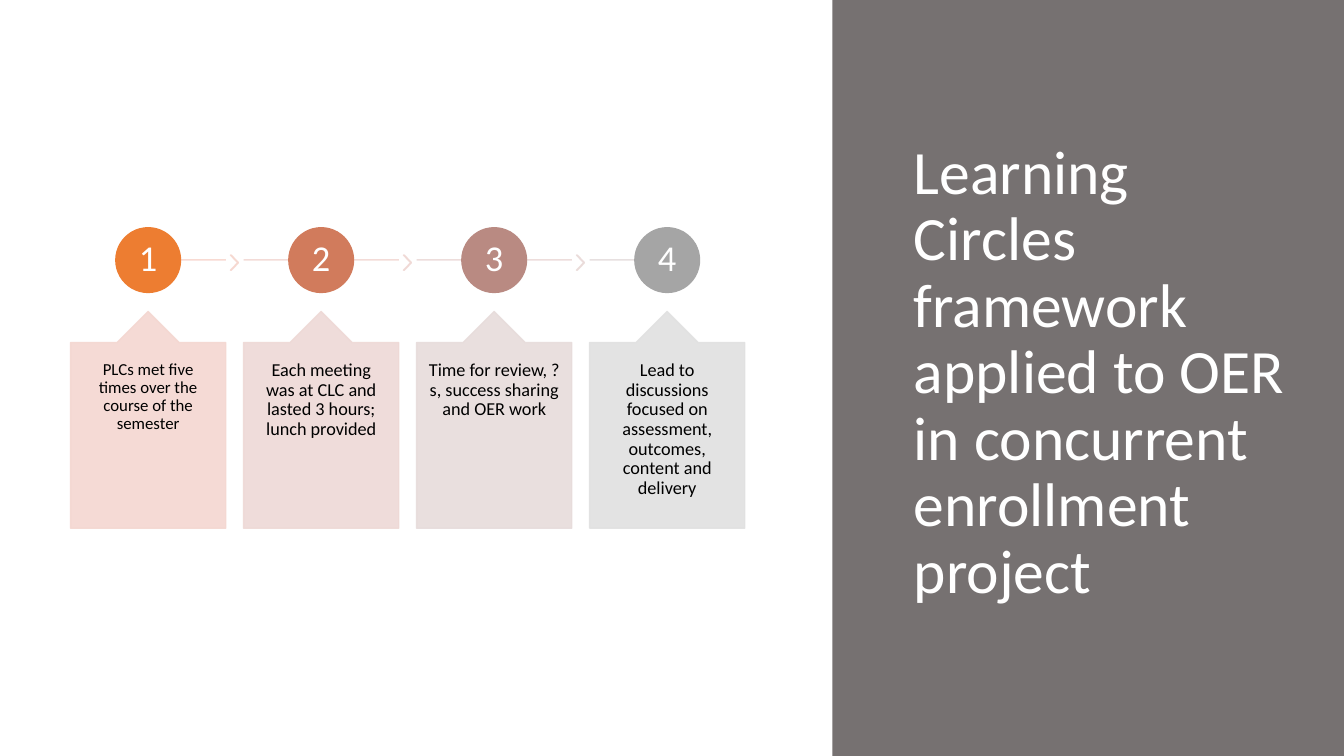
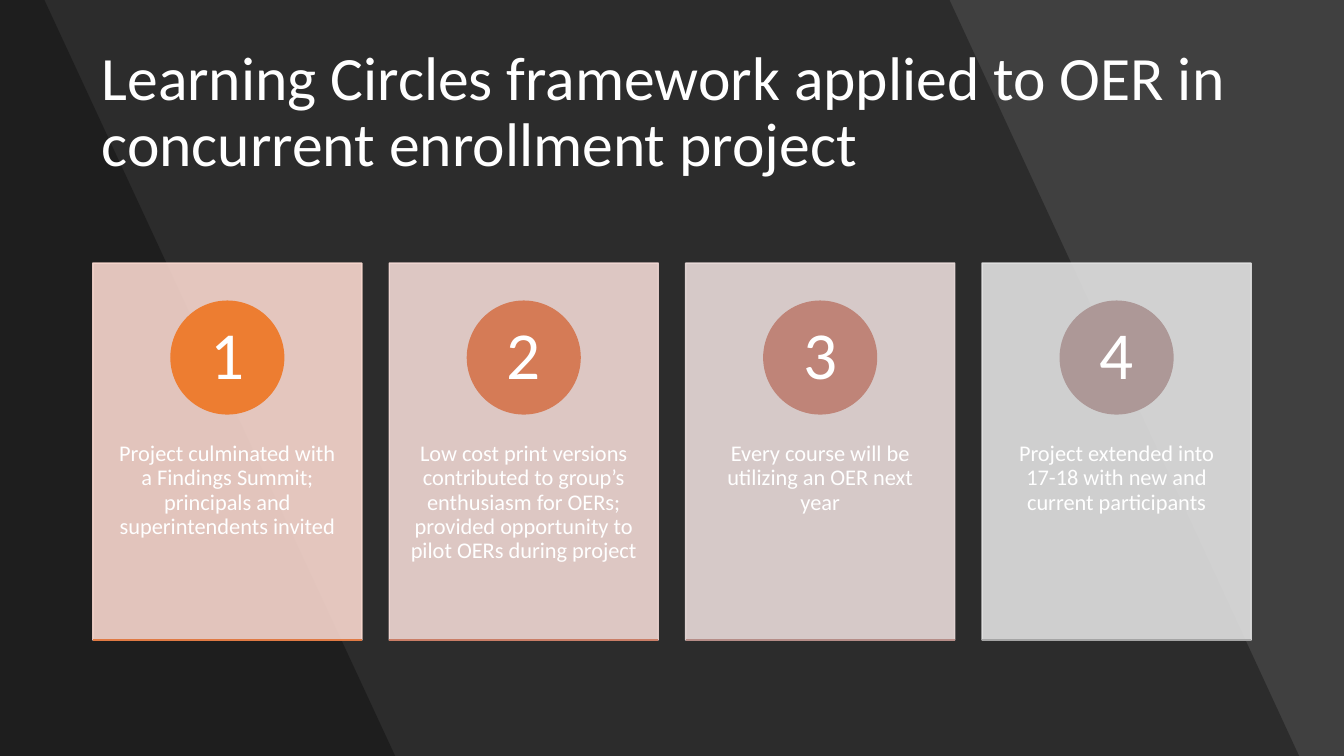
"""Build two slides on a Learning Circles project as numbered steps and cards."""
from pptx import Presentation
from pptx.dml.color import RGBColor
from pptx.enum.shapes import MSO_CONNECTOR, MSO_SHAPE
from pptx.enum.text import MSO_ANCHOR, PP_ALIGN
from pptx.oxml.ns import qn
from pptx.util import Cm, Pt
from lxml import etree

RECT = MSO_SHAPE.RECTANGLE
OVAL = MSO_SHAPE.OVAL
ARROW = MSO_SHAPE.CHEVRON
CALLOUT = MSO_SHAPE.UP_ARROW_CALLOUT
LINE = MSO_CONNECTOR.STRAIGHT
TOP, MIDDLE = MSO_ANCHOR.TOP, MSO_ANCHOR.MIDDLE
LEFT, CENTER = PP_ALIGN.LEFT, PP_ALIGN.CENTER

WIDE, HIGH = 33.87, 19.05
FONT = "Calibri"
TITLE = "Learning Circles framework applied to OER in concurrent enrollment project"

COLORS = {
    "white": "FFFFFF", "black": "000000", "panel": "767171", "night": "404040",
    "step dot 1": "ED7D31", "step dot 2": "D17B5C",
    "step dot 3": "B98A82", "step dot 4": "A5A5A5",
    "step box 1": "F4D7D1", "step box 2": "EED9D6",
    "step box 3": "E7DCDB", "step box 4": "E1E1E1",
    "step line 1": "F8D7CE", "step line 2": "F2D8D3",
    "step line 3": "ECDAD8", "step line 4": "E5DDDD",
    "step arrow 1": "F6D7CF", "step arrow 2": "F0D8D4", "step arrow 3": "EADBD9",
    "card dot 1": "ED7D31", "card dot 2": "D57B56",
    "card dot 3": "BF8478", "card dot 4": "AD9897",
    "card box 1": "F8D7CE", "card box 2": "F1D8D4",
    "card box 3": "E9DBDA", "card box 4": "E1E1E1",
    "card line 1": "E07A44", "card line 2": "CA7E67",
    "card line 3": "B68D88", "card line 4": "A5A5A5",
}

STEPS = [
    ("PLCs met five times over the course of the semester", 12),
    ("Each meeting was at CLC and lasted 3 hours; lunch provided", 13),
    ("Time for review, ?s, success sharing and OER work", 13),
    ("Lead to discussions focused on assessment, outcomes, content and delivery", 13),
]
CARDS = [
    "Project culminated with a Findings Summit; principals and superintendents invited",
    "Low cost print versions contributed to group’s enthusiasm for OERs; "
    "provided opportunity to pilot OERs during project",
    "Every course will be utilizing an OER next year",
    "Project extended into 17-18 with new and current participants",
]


class Deck:
    def __init__(self):
        self.prs = Presentation()
        self.prs.slide_width, self.prs.slide_height = Cm(WIDE), Cm(HIGH)
        self.slide = None

    def color(self, name):
        return RGBColor.from_string(COLORS[name])

    def page(self, back):
        self.slide = self.prs.slides.add_slide(self.prs.slide_layouts[6])
        fill = self.slide.background.fill
        fill.solid()
        fill.fore_color.rgb = self.color(back)

    def fade(self, item, alpha):
        for tone in item._element.spPr.iter(qn("a:srgbClr")):
            etree.SubElement(tone, qn("a:alpha"), val=str(alpha * 1000))

    def paint(self, shape, name, alpha=100, edge=True):
        shape.shadow.inherit = False
        shape.fill.solid()
        shape.fill.fore_color.rgb = self.color(name)
        if edge:
            shape.line.color.rgb = self.color(name)
            shape.line.width = Pt(1)
        else:
            shape.line.fill.background()
        if alpha < 100:
            self.fade(shape, alpha)

    def shape(self, kind, box, name, alpha=100, adjust=(), edge=True):
        shape = self.slide.shapes.add_shape(kind, *map(Cm, box))
        for i, value in enumerate(adjust):
            shape.adjustments[i] = value
        self.paint(shape, name, alpha, edge)
        return shape

    def band(self, points):
        dots = [(Cm(x), Cm(y)) for x, y in points]
        form = self.slide.shapes.build_freeform(*dots[0])
        form.add_line_segments(dots[1:], close=True)
        self.paint(form.convert_to_shape(), "black", 30, False)

    def line(self, x1, x2, y, name, alpha=100):
        line = self.slide.shapes.add_connector(LINE, Cm(x1), Cm(y), Cm(x2), Cm(y))
        line.line.color.rgb = self.color(name)
        line.line.width = Pt(1)
        etree.SubElement(line._element.spPr, qn("a:effectLst"))
        if alpha < 100:
            self.fade(line, alpha)

    def label(self, shape, text, size, name="white", align=CENTER,
              anchor=MIDDLE, side=0.05, top=0.05):
        frame = shape.text_frame
        para = frame.paragraphs[0]
        run = para.add_run()
        run.text = text
        run.font.color.rgb = self.color(name)
        style = [
            (frame, {"word_wrap": True, "vertical_anchor": anchor,
                     "margin_left": Cm(side), "margin_right": Cm(side),
                     "margin_top": Cm(top), "margin_bottom": Cm(0.05)}),
            (para, {"alignment": align, "line_spacing": 0.9}),
            (run.font, {"name": FONT, "size": Pt(size)}),
        ]
        for item, values in style:
            for key, value in values.items():
                setattr(item, key, value)

    def title(self, *box):
        shape = self.slide.shapes.add_textbox(*map(Cm, box))
        self.label(shape, TITLE, 44, align=LEFT, side=0.25)

    def badge(self, mid, top, wide, num, size, name):
        dot = self.shape(OVAL, (mid - wide / 2, top, wide, wide), name)
        self.label(dot, str(num), size)


def steps(deck):
    deck.page("white")
    deck.shape(RECT, (20.98, 0, WIDE - 20.98, HIGH), "panel", edge=False)
    deck.title(22.78, 1.78, 10.19, 15.29)
    wide, pitch, axis = 3.91, 4.36, 6.55
    for i, (text, size) in enumerate(STEPS):
        num, left = i + 1, 1.78 + i * pitch
        mid, last = left + wide / 2, i == len(STEPS) - 1
        deck.line(left if i else mid, mid if last else left + wide, axis,
                  f"step line {num}", 90)
        if not last:
            deck.shape(ARROW, (left + 4.03, 6.43, 0.2, 0.38),
                       f"step arrow {num}", 90, [0.9])
        deck.badge(mid, 5.74, 1.63, num, 26, f"step dot {num}")
        box = deck.shape(CALLOUT, (left, 7.85, wide, 5.46),
                         f"step box {num}", 90, [0.5, 0.2, 0.2, 1])
        deck.label(box, text, size, "black", anchor=TOP, side=0.3, top=0.46)


def cards(deck):
    deck.page("night")
    for top, foot in ((23.93, 32.74), (1.12, 9.96)):
        deck.band([(0, 0), (top, 0), (foot, HIGH), (0, HIGH)])
    deck.title(2.31, 1.02, 29.24, 3.68)
    wide, pitch, head, tall = 6.78, 7.47, 6.63, 9.5
    for i, text in enumerate(CARDS):
        num, left = i + 1, 2.34 + i * pitch
        box = deck.shape(RECT, (left, head, wide, tall), f"card box {num}", 90)
        deck.label(box, text, 16, anchor=TOP, side=0.53, top=4.52)
        deck.badge(left + wide / 2, 7.59, 2.84, num, 48, f"card dot {num}")
        deck.line(left, left + wide, head + tall, f"card line {num}")


def main():
    deck = Deck()
    steps(deck)
    cards(deck)
    deck.prs.save("out.pptx")


if __name__ == "__main__":
    main()
